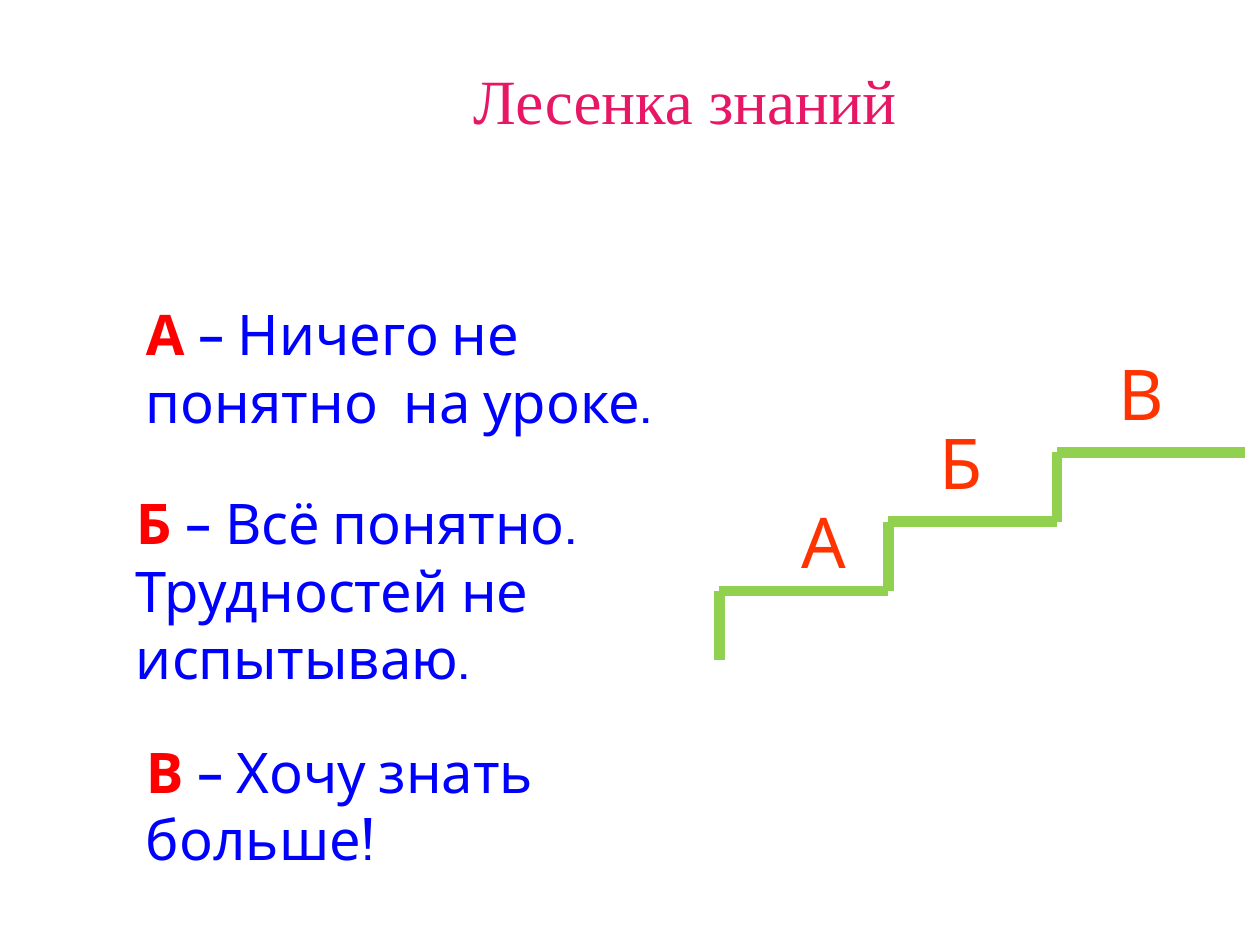
from lxml import etree
from pptx import Presentation
from pptx.dml.color import RGBColor
from pptx.enum.shapes import MSO_CONNECTOR
from pptx.enum.text import MSO_AUTO_SIZE, PP_ALIGN
from pptx.oxml.ns import qn
from pptx.util import Pt

STRAIGHT = MSO_CONNECTOR.STRAIGHT
GROW = MSO_AUTO_SIZE.SHAPE_TO_FIT_TEXT
CENTER, LEFT = PP_ALIGN.CENTER, PP_ALIGN.LEFT

COLORS = {"title": "E81766", "stair": "92D050", "step": "FF3300",
          "letter": "FF0000", "meaning": "0000FF"}
TITLE = {"name": "Times New Roman", "size": Pt(36)}
STEP = {"name": "Cabin", "size": Pt(40)}
LETTER = {"name": "Cabin", "size": Pt(32), "bold": True}
MEANING = {"name": "Cabin", "size": Pt(32), "bold": False}

STAIR_LEFT, STAIR_BOTTOM = 411.1, 377.3
TREAD, RISE = 96.5, 39.6
TREADS = [TREAD, TREAD, 107.3]

STEP_LABELS = [("А", 450.7, 281.5), ("Б", 529.9, 236.2), ("В", 632.2, 196.6)]
MEANINGS = [
    ("А", " – Ничего не понятно  на уроке.", (76.3, 167.8, 357.1, 85)),
    ("Б", " – Всё понятно. Трудностей не испытываю.", (70.6, 275.8, 317.5, 123.8)),
    ("В", " – Хочу знать больше!", (76.3, 417.6, 306, 85)),
]


def add_text(slide, box, runs, wrap=True, align=LEFT):
    """Add a one-paragraph text box; runs holds (text, font format, colour key)."""
    frame = slide.shapes.add_textbox(*map(Pt, box)).text_frame
    frame.word_wrap = wrap
    if wrap:
        frame.auto_size = GROW
    paragraph = frame.paragraphs[0]
    paragraph.alignment = align
    for text, font_format, color in runs:
        run = paragraph.add_run()
        run.text = text
        for attribute, value in font_format.items():
            setattr(run.font, attribute, value)
        run.font.color.rgb = RGBColor.from_string(COLORS[color])


def add_stair_line(slide, *ends):
    line = slide.shapes.add_connector(STRAIGHT, *map(Pt, ends))
    line.line.width = Pt(6)
    line.line.color.rgb = RGBColor.from_string(COLORS["stair"])
    etree.SubElement(line._element.spPr, qn("a:effectLst"))


def add_staircase(slide):
    for i, tread in enumerate(TREADS):
        x = STAIR_LEFT + i * TREAD
        bottom = STAIR_BOTTOM - i * RISE
        top = bottom - RISE
        add_stair_line(slide, x, bottom, x, top)
        add_stair_line(slide, x, top, x + tread, top)


def main():
    prs = Presentation()
    prs.slide_width, prs.slide_height = Pt(720), Pt(540)
    slide = prs.slides.add_slide(prs.slide_layouts[6])

    add_text(slide, (87.8, 31.7, 607, 96.5),
             [("Лесенка знаний", TITLE, "title")], wrap=False, align=CENTER)
    add_staircase(slide)
    for letter, left, top in STEP_LABELS:
        add_text(slide, (left, top, 51.1, 55.4), [(letter, STEP, "step")])
    for letter, meaning, box in MEANINGS:
        add_text(slide, box, [(letter, LETTER, "letter"),
                              (meaning, MEANING, "meaning")])
    prs.save("out.pptx")


if __name__ == "__main__":
    main()
